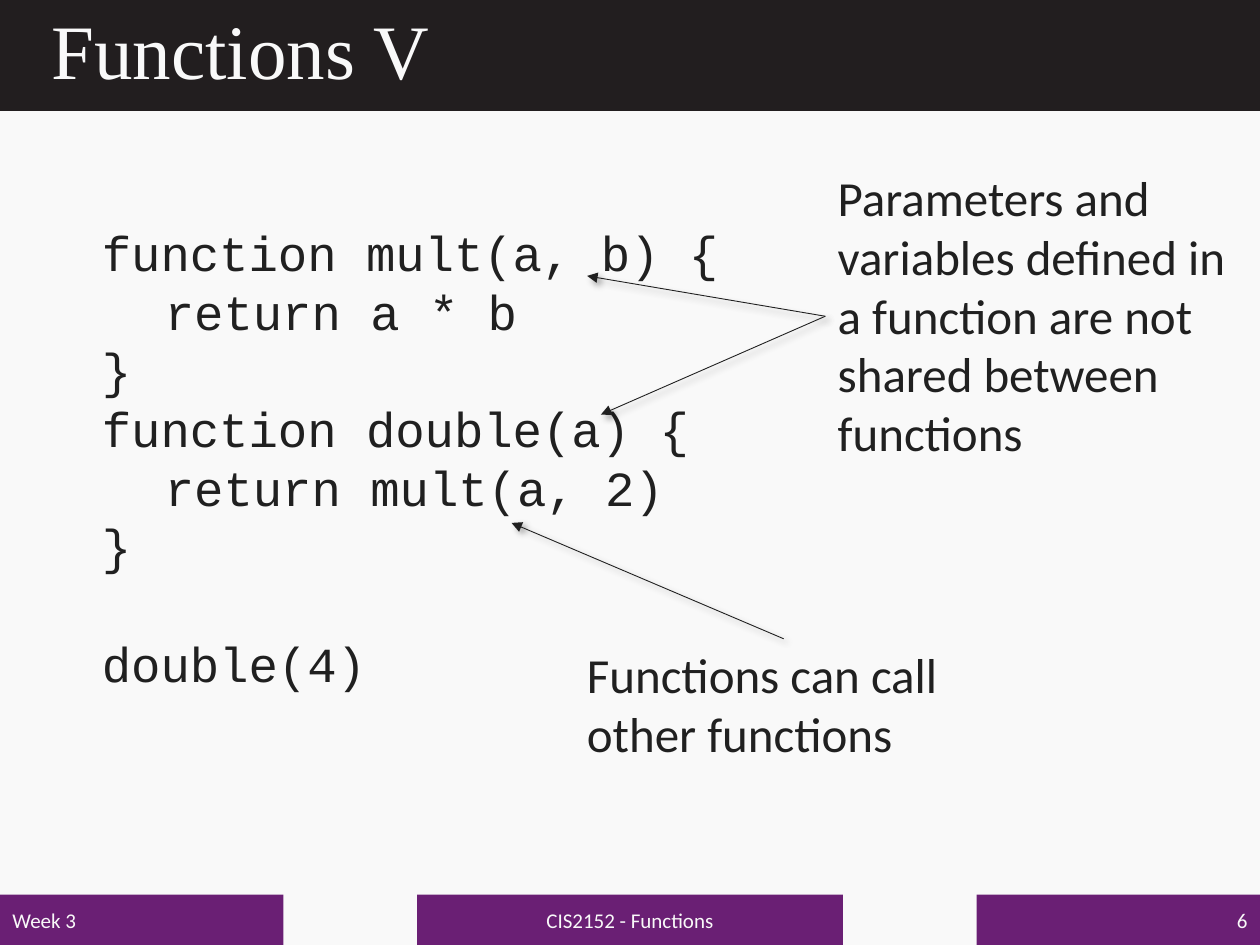
import dataclasses

import lxml.etree
import pptx
import pptx.dml.color
import pptx.enum.shapes
import pptx.enum.text
import pptx.oxml
import pptx.oxml.ns
import pptx.util

Inches, Pt = pptx.util.Inches, pptx.util.Pt
ANCHOR = pptx.enum.text.MSO_ANCHOR
ALIGN = pptx.enum.text.PP_ALIGN
FIT = pptx.enum.text.MSO_AUTO_SIZE.SHAPE_TO_FIT_TEXT
RECTANGLE = pptx.enum.shapes.MSO_SHAPE.RECTANGLE
STRAIGHT = pptx.enum.shapes.MSO_CONNECTOR.STRAIGHT
TOP, LEFT = 0, 1


@dataclasses.dataclass(frozen=True)
class Theme:
    paper: str = "F9F9F9"
    ink: str = "202020"
    band: str = "221E1F"
    accent: str = "6A1F74"
    title_font: str = "Times New Roman"
    body_font: str = "Calibri"
    code_font: str = "Courier New"
    title_size: float = 44
    body_size: float = 28
    footer_size: float = 12
    code_pitch: float = 33.5
    arrow_width: float = 0.5


THEME = Theme()

SHADOW = (
    '<a:effectLst %s><a:outerShdw blurRad="50800" dist="38100" dir="2700000" '
    'algn="tl" rotWithShape="0"><a:srgbClr val="000000"><a:alpha val="40000"/>'
    "</a:srgbClr></a:outerShdw></a:effectLst>" % pptx.oxml.ns.nsdecls("a")
)


def rgb(value):
    return pptx.dml.color.RGBColor.from_string(value)


def apply(target, values):
    for name, value in values.items():
        setattr(target, name, value)


def write(frame, lines, font, size, color, paragraph_format=None, **frame_format):
    apply(frame, {"word_wrap": True, **frame_format})
    for index, line in enumerate(lines):
        paragraph = frame.paragraphs[0] if index == 0 else frame.add_paragraph()
        apply(paragraph, paragraph_format or {})
        run = paragraph.add_run()
        run.text = line
        apply(run.font, {"name": font, "size": Pt(size)})
        run.font.color.rgb = rgb(color)


def add_bar(slide, box, color):
    bar = slide.shapes.add_shape(RECTANGLE, *map(Inches, box))
    bar.shadow.inherit = False
    bar.fill.solid()
    bar.fill.fore_color.rgb = rgb(color)
    bar.line.fill.background()
    return bar


def add_header(slide, box, heading):
    # Dark band behind the title placeholder
    band = add_bar(slide, box, THEME.band)
    title = slide.shapes.title
    title._element.addprevious(band._element)
    left, top, width, height = box
    apply(title, {
        "left": Inches(left + 0.31), "top": Inches(top),
        "width": Inches(width - 0.61), "height": Inches(height - 0.02),
    })
    write(title.text_frame, [heading], THEME.title_font, THEME.title_size, THEME.paper,
          {"alignment": ALIGN.LEFT, "line_spacing": 0.9}, vertical_anchor=ANCHOR.MIDDLE)


def add_footer(slide, box, labels):
    # Outer bars touch the slide edges, the middle one is centred
    left, top, width, height = box
    side, middle = 2.25, 3.38
    bars = (
        (left, side, ALIGN.LEFT),
        (left + (width - middle) / 2, middle, ALIGN.CENTER),
        (left + width - side, side, ALIGN.RIGHT),
    )
    for label, (x, bar_width, alignment) in zip(labels, bars):
        bar = add_bar(slide, (x, top, bar_width, height), THEME.accent)
        write(bar.text_frame, [label], THEME.body_font, THEME.footer_size, THEME.paper,
              {"alignment": alignment}, vertical_anchor=ANCHOR.MIDDLE)


def add_code(slide, box, lines):
    code = slide.shapes.add_textbox(*map(Inches, box))
    write(code.text_frame, lines, THEME.code_font, THEME.body_size, THEME.ink,
          {"line_spacing": Pt(THEME.code_pitch)})
    # One line of air before the call
    code.text_frame.paragraphs[-1].space_before = Pt(THEME.code_pitch)


def add_callout(slide, box, remark, side, targets):
    callout = slide.shapes.add_textbox(*map(Inches, box))
    write(callout.text_frame, [remark], THEME.body_font, THEME.body_size, THEME.ink,
          auto_size=FIT)
    # Arrows from the middle of one side to the code
    for x, y in targets:
        arrow = slide.shapes.add_connector(STRAIGHT, 0, 0, Inches(x), Inches(y))
        arrow.begin_connect(callout, side)
        arrow.line.width = Pt(THEME.arrow_width)
        arrow.line.color.rgb = rgb(THEME.ink)
        lxml.etree.SubElement(arrow.line._get_or_add_ln(),
                              pptx.oxml.ns.qn("a:tailEnd"), type="triangle")
        arrow._element.spPr.append(pptx.oxml.parse_xml(SHADOW))


def main():
    deck = pptx.Presentation()
    apply(deck, {"slide_width": Inches(10), "slide_height": Inches(7.5)})
    slide = deck.slides.add_slide(deck.slide_layouts.get_by_name("Title Only"))
    slide.background.fill.solid()
    slide.background.fill.fore_color.rgb = rgb(THEME.paper)

    add_header(slide, (0, 0, 10, 0.88), "Functions V")
    add_footer(slide, (0, 7.1, 10, 0.4), ("Week 3", "CIS2152 - Functions", "6"))
    add_code(slide, (0.71, 1.72, 5.21, 3.87), (
        "function mult(a, b) {",
        "\treturn a * b",
        "}",
        "function double(a) {",
        "\treturn mult(a, 2)",
        "}",
        "double(4)",
    ))
    add_callout(slide, (4.56, 5.07, 3.32, 1.04),
                "Functions can call other functions", TOP, [(4.06, 4.15)])
    add_callout(slide, (6.55, 1.28, 3.45, 2.46),
                "Parameters and variables defined in a function are not shared "
                "between functions", LEFT, [(4.66, 2.19), (4.77, 3.29)])
    deck.save("out.pptx")


if __name__ == "__main__":
    main()
